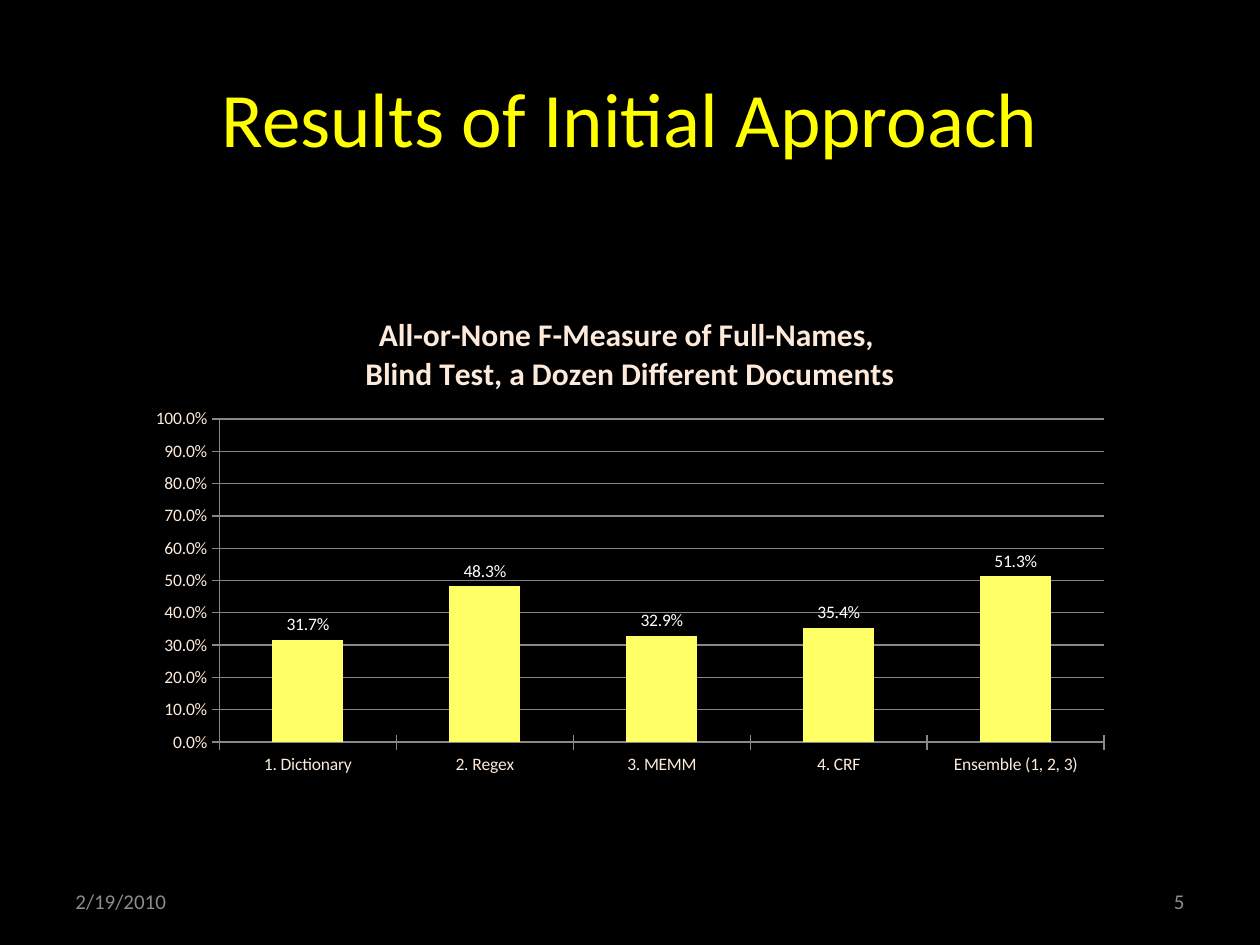
from pptx import Presentation
from pptx.chart.data import CategoryChartData
from pptx.dml.color import RGBColor
from pptx.enum.chart import XL_CHART_TYPE as ChartType, XL_LABEL_POSITION as LabelPos
from pptx.enum.chart import XL_TICK_MARK as Tick
from pptx.enum.text import MSO_ANCHOR as Anchor, PP_ALIGN as Align
from pptx.util import Pt

COLORS = {"background": "000000", "title": "FFFF00", "footer": "8C8C8C",
          "axis": "FDEADA", "label": "FFFFFF", "bar": "FFFF66", "line": "878787"}
PERCENT = "0.0%"


def style(font, size, color, bold=False):
    font.name, font.size, font.bold = "Calibri", Pt(size), bold
    font.color.rgb = RGBColor.from_string(COLORS[color])


deck = Presentation()
deck.slide_width, deck.slide_height = Pt(720), Pt(540)
slide = deck.slides.add_slide(deck.slide_layouts[6])
slide.background.fill.solid()
slide.background.fill.fore_color.rgb = RGBColor.from_string(COLORS["background"])

# Heading, date and page number
for text, left, top, width, height, size, color, align in [
    ("Results of Initial Approach", 36, 21.6, 648, 90, 44, "title", Align.CENTER),
    ("2/19/2010", 36, 500.5, 168, 28.75, 12, "footer", Align.LEFT),
    ("5", 516, 500.5, 168, 28.75, 12, "footer", Align.RIGHT),
]:
    frame = slide.shapes.add_textbox(Pt(left), Pt(top), Pt(width), Pt(height)).text_frame
    frame.word_wrap = True
    frame.vertical_anchor = Anchor.MIDDLE
    line = frame.paragraphs[0]
    line.alignment = align
    run = line.add_run()
    run.text = text
    style(run.font, size, color)

# F-measure chart
scores = CategoryChartData(number_format=PERCENT)
scores.categories = ["1. Dictionary", "2. Regex", "3. MEMM", "4. CRF", "Ensemble (1, 2, 3)"]
scores.add_series("Series 1", [0.317, 0.483, 0.329, 0.354, 0.513])
chart = slide.shapes.add_chart(ChartType.COLUMN_CLUSTERED, Pt(77.75), Pt(168),
                               Pt(564.5), Pt(280), scores).chart
style(chart.font, 10, "label")
chart.has_legend = False

# Chart title
chart.has_title = True
heading = chart.chart_title.text_frame
for number, text in enumerate(["All-or-None F-Measure of Full-Names, ",
                               "Blind Test, a Dozen Different Documents"]):
    line = heading.add_paragraph() if number else heading.paragraphs[0]
    run = line.add_run()
    run.text = text
    style(run.font, 18, "axis", bold=True)

# Axes and gridlines
methods, measure = chart.category_axis, chart.value_axis
measure.minimum_scale, measure.maximum_scale, measure.major_unit = 0, 1, 0.1
measure.has_major_gridlines = True
measure.tick_labels.number_format = PERCENT
measure.tick_labels.number_format_is_linked = False
for axis in (methods, measure):
    axis.major_tick_mark = Tick.CROSS
    style(axis.tick_labels.font, 10, "axis")
for stroke in (methods.format.line, measure.format.line, measure.major_gridlines.format.line):
    stroke.width = Pt(0.75)
    stroke.color.rgb = RGBColor.from_string(COLORS["line"])

# Bars and value labels
plot = chart.plots[0]
plot.gap_width = 150
plot.vary_by_categories = False
bars = plot.series[0]
bars.format.fill.solid()
bars.format.fill.fore_color.rgb = RGBColor.from_string(COLORS["bar"])
labels = bars.data_labels
labels.show_value = True
labels.position = LabelPos.OUTSIDE_END
labels.number_format = PERCENT
labels.number_format_is_linked = False
style(labels.font, 10, "label")

deck.save("out.pptx")
